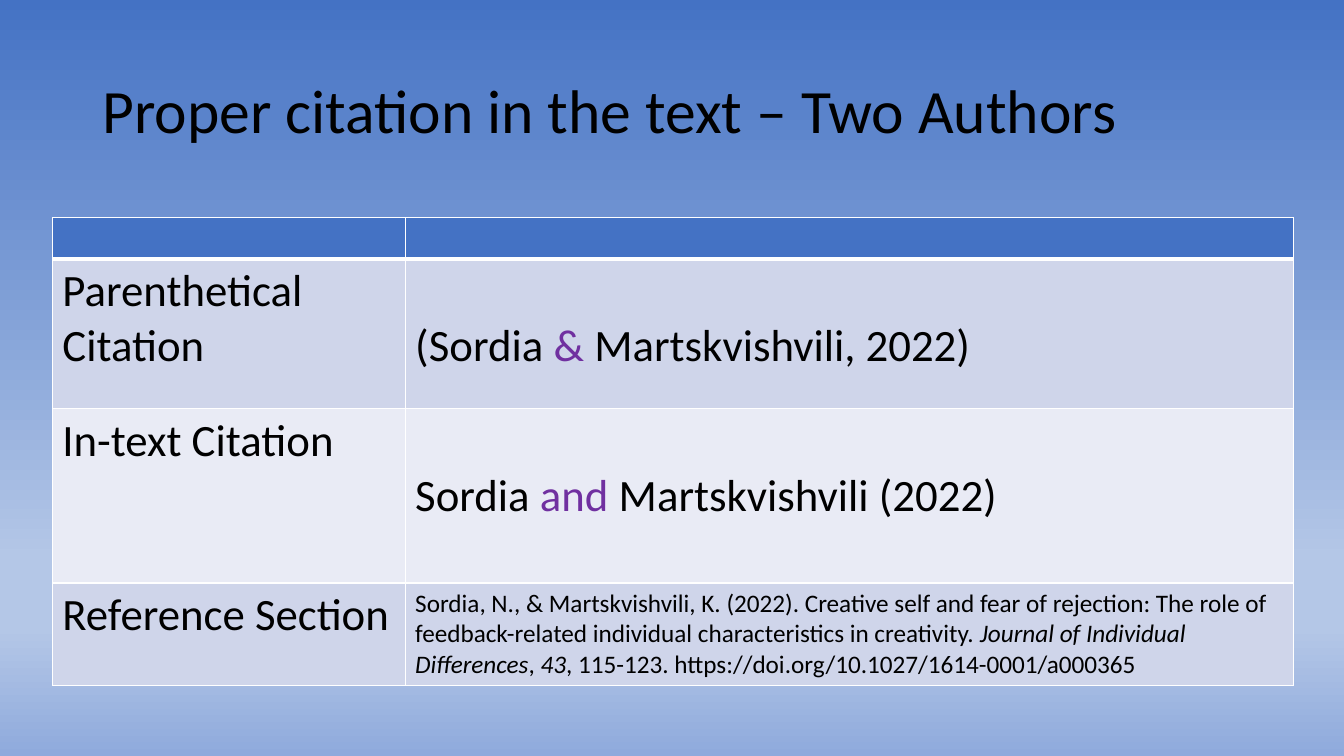
import dataclasses

import lxml.etree
import pptx
import pptx.dml.color
import pptx.enum.text
import pptx.oxml.ns
import pptx.util

Cm = pptx.util.Cm
Pt = pptx.util.Pt
qn = pptx.oxml.ns.qn

COLORS = {
    "text": "000000",
    "accent": "7030A0",
    "border": "FFFFFF",
    "header": "4472C4",
    "band_dark": "CFD5EA",
    "band_light": "E9EBF5",
}
BACKGROUND_STOPS = [(0, "4472C4"), (74, "B4C7E7"), (83, "B4C7E7"), (100, "8FAADC")]
ONE_LINE_DOWN = 1.51  # top margin that leaves one 32 pt line free, in cm


@dataclasses.dataclass(frozen=True)
class Span:
    text: str
    color: str = "text"
    italic: bool = False


@dataclasses.dataclass(frozen=True)
class CitationRow:
    height: float
    fill: str
    label: str = ""
    example: tuple[Span, ...] = ()
    example_size: int = 32
    example_top: float = 0.13


ROWS = [
    CitationRow(1.04, "header"),
    CitationRow(
        3.77, "band_dark", "Parenthetical Citation",
        (Span("(Sordia "), Span("& ", "accent"), Span("Martskvishvili, 2022)")),
        example_top=ONE_LINE_DOWN,
    ),
    CitationRow(
        4.39, "band_light", "In-text Citation",
        (Span("Sordia "), Span("and ", "accent"), Span("Martskvishvili (2022)")),
        example_top=ONE_LINE_DOWN,
    ),
    CitationRow(
        2.59, "band_dark", "Reference Section",
        (
            Span("Sordia, N., & Martskvishvili, K. (2022). Creative self and fear of "
                 "rejection: The role of feedback-related individual characteristics "
                 "in creativity. "),
            Span("Journal of Individual Differences", italic=True),
            Span(", "),
            Span("43", italic=True),
            Span(", 115-123. https://doi.org/10.1027/1614-0001/a000365"),
        ),
        example_size=18,
    ),
]


def rgb(name: str) -> pptx.dml.color.RGBColor:
    return pptx.dml.color.RGBColor.from_string(COLORS[name])


def add_text(paragraph, text: str, *, size: int, color: str = "text",
             italic: bool = False) -> None:
    run = paragraph.add_run()
    run.text = text
    run.font.name = "Calibri"
    run.font.size = Pt(size)
    run.font.bold = False
    run.font.italic = italic
    run.font.color.rgb = rgb(color)


def paint_background(slide) -> None:
    fill = slide.background.fill
    fill.gradient()
    fill.gradient_angle = 270
    stop_list = slide.element.find(".//" + qn("a:gsLst"))
    for stop in list(stop_list):
        stop_list.remove(stop)
    for position, color in BACKGROUND_STOPS:
        stop = lxml.etree.SubElement(stop_list, qn("a:gs"), pos=str(position * 1000))
        lxml.etree.SubElement(stop, qn("a:srgbClr"), val=color)


def set_borders(cell, top: int, bottom: int) -> None:
    properties = cell._tc.get_or_add_tcPr()
    widths = {"a:lnL": 1, "a:lnR": 1, "a:lnT": top, "a:lnB": bottom}
    for index, (tag, width) in enumerate(widths.items()):
        line = lxml.etree.Element(qn(tag), w=str(Pt(width)))
        solid = lxml.etree.SubElement(line, qn("a:solidFill"))
        lxml.etree.SubElement(solid, qn("a:srgbClr"), val=COLORS["border"])
        properties.insert(index, line)


def add_title(slide) -> None:
    title = slide.shapes.title
    title.left, title.top = Cm(2.33), Cm(1.01)
    title.width, title.height = Cm(29.21), Cm(3.68)
    frame = title.text_frame
    frame.word_wrap = True
    frame.auto_size = pptx.enum.text.MSO_AUTO_SIZE.NONE
    frame.vertical_anchor = pptx.enum.text.MSO_ANCHOR.MIDDLE
    paragraph = frame.paragraphs[0]
    paragraph.alignment = pptx.enum.text.PP_ALIGN.LEFT
    paragraph.line_spacing = 0.9
    add_text(paragraph, "Proper citation in the text – Two Authors", size=44)


def add_citation_table(slide) -> None:
    height = sum(row.height for row in ROWS)
    table = slide.shapes.add_table(
        len(ROWS), 2, Cm(1.32), Cm(5.49), Cm(31.27), Cm(height)).table
    table.columns[0].width = Cm(8.89)
    table.columns[1].width = Cm(22.38)
    for index, row in enumerate(ROWS):
        table.rows[index].height = Cm(row.height)
        label_cell, example_cell = table.rows[index].cells
        for cell in (label_cell, example_cell):
            cell.fill.solid()
            cell.fill.fore_color.rgb = rgb(row.fill)
            # A thicker rule separates the header from the first row
            set_borders(cell, top=3 if index == 1 else 1, bottom=3 if index == 0 else 1)
        if row.label:
            add_text(label_cell.text_frame.paragraphs[0], row.label, size=32)
        example_cell.margin_top = Cm(row.example_top)
        for span in row.example:
            add_text(example_cell.text_frame.paragraphs[0], span.text,
                     size=row.example_size, color=span.color, italic=span.italic)


def main() -> None:
    presentation = pptx.Presentation()
    presentation.slide_width = Cm(33.87)
    presentation.slide_height = Cm(19.05)
    slide = presentation.slides.add_slide(presentation.slide_layouts[5])
    paint_background(slide)
    add_title(slide)
    add_citation_table(slide)
    presentation.save("out.pptx")


if __name__ == "__main__":
    main()
